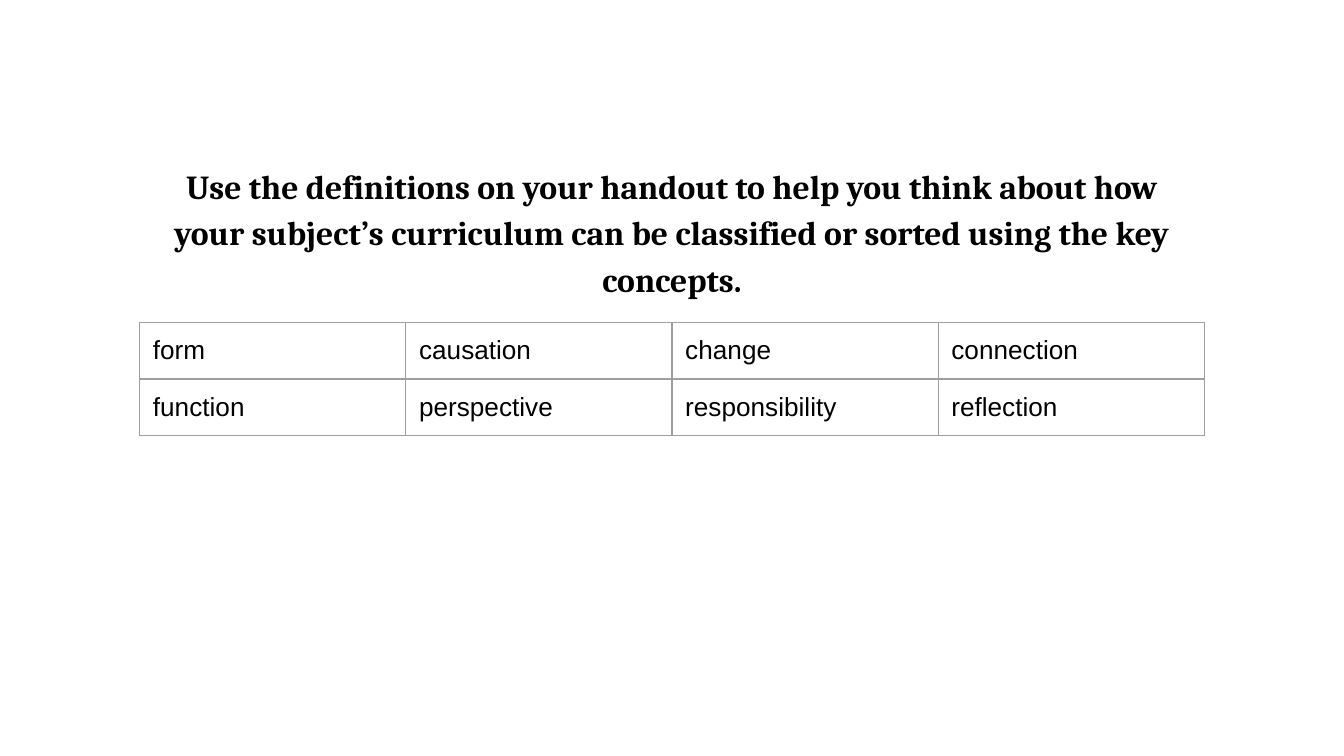
import lxml.etree
import pptx
import pptx.dml.color
import pptx.enum.text
import pptx.oxml.ns
import pptx.util

Cm = pptx.util.Cm
Pt = pptx.util.Pt
BLACK = pptx.dml.color.RGBColor(0x00, 0x00, 0x00)
WHITE = pptx.dml.color.RGBColor(0xFF, 0xFF, 0xFF)
GREY = pptx.dml.color.RGBColor(0x9E, 0x9E, 0x9E)

MARGIN = Cm(0.25)
INSETS = {f"margin_{side}": MARGIN for side in ("left", "right", "top", "bottom")}
INSTRUCTION_FONT = {"name": "Cambria", "size": Pt(18), "bold": True}
CONCEPT_FONT = {"name": "Arial", "size": Pt(14), "bold": False}
INSTRUCTION = (
    "Use the definitions on your handout to help you think about how your "
    "subject’s curriculum can be classified or sorted using the key concepts."
)
CONCEPTS = [
    ["form", "causation", "change", "connection"],
    ["function", "perspective", "responsibility", "reflection"],
]


def set_attributes(target, values):
    for name, value in values.items():
        setattr(target, name, value)


def write_text(p, text, font):
    r = p.add_run()
    r.text = text
    set_attributes(r.font, font)
    r.font.color.rgb = BLACK


def add_borders(cell):
    qn = pptx.oxml.ns.qn
    tc_pr = cell._tc.get_or_add_tcPr()
    for i, edge in enumerate(("a:lnL", "a:lnR", "a:lnT", "a:lnB")):
        line = lxml.etree.Element(qn(edge), w=str(Pt(0.75)))
        fill = lxml.etree.SubElement(line, qn("a:solidFill"))
        lxml.etree.SubElement(fill, qn("a:srgbClr"), val=str(GREY))
        tc_pr.insert(i, line)


def add_instruction(s, left, top, width, height):
    tf = s.shapes.add_textbox(left, top, width, height).text_frame
    set_attributes(tf, {**INSETS, "word_wrap": True})
    p = tf.paragraphs[0]
    set_attributes(p, {"alignment": pptx.enum.text.PP_ALIGN.CENTER, "line_spacing": 1.15})
    write_text(p, INSTRUCTION, INSTRUCTION_FONT)


def add_concept_table(s, left, top, width, height):
    rows, cols = len(CONCEPTS), len(CONCEPTS[0])
    table = s.shapes.add_table(rows, cols, left, top, width, height).table
    set_attributes(table, {"first_row": False, "horz_banding": False})
    for row, concepts in enumerate(CONCEPTS):
        for col, concept in enumerate(concepts):
            cell = table.cell(row, col)
            set_attributes(cell, INSETS)
            cell.fill.solid()
            cell.fill.fore_color.rgb = WHITE
            add_borders(cell)
            write_text(cell.text_frame.paragraphs[0], concept, CONCEPT_FONT)


def main():
    prs = pptx.Presentation()
    set_attributes(prs, {"slide_width": Cm(25.4), "slide_height": Cm(14.29)})
    s = prs.slides.add_slide(prs.slide_layouts[6])
    left, width = Cm(2.64), Cm(20.12)
    add_concept_table(s, left, Cm(6.1), width, Cm(2.13))
    add_instruction(s, left, Cm(2.77), width, Cm(2.8))
    prs.save("out.pptx")


if __name__ == "__main__":
    main()
